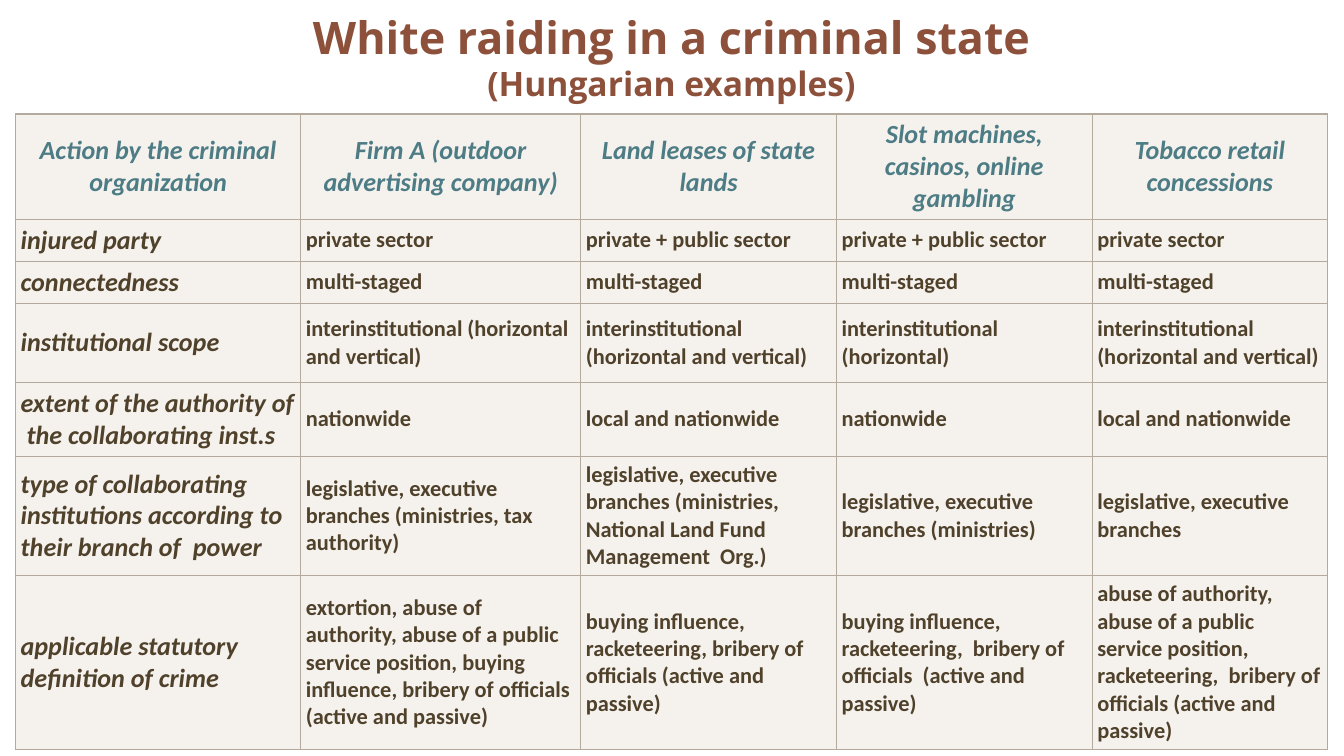
import pptx
import pptx.util
import pptx.dml.color
import pptx.enum.text
import pptx.oxml
import pptx.oxml.ns

Pt = pptx.util.Pt
ALIGN = pptx.enum.text.PP_ALIGN
MIDDLE = pptx.enum.text.MSO_ANCHOR.MIDDLE

BROWN, TEAL, DARK = "8D503B", "4D7C85", "50412B"
SAND, RULE = "EFEAE4", "B3A99D"
LEFT, TOP, INSET = 8.4, 61, 2.7
THIN, THICK = 0.5, 1
COLS = [152.8, 150, 137, 137, 126]
ROWS = [54, 21.6, 21.6, 42.5, 38.2, 61.2, 89.3]
CELLS = [
    ["Action by the criminal organization", "Firm A (outdoor advertising company)",
     "Land leases of state lands", "Slot machines, casinos, online gambling",
     "Tobacco retail\nconcessions"],
    ["injured party", "private sector", "private + public sector",
     "private + public sector", "private sector"],
    ["connectedness"] + ["multi-staged"] * 4,
    ["institutional scope", "interinstitutional (horizontal and vertical)",
     "interinstitutional\n(horizontal and vertical)",
     "interinstitutional (horizontal)",
     "interinstitutional (horizontal and vertical)"],
    ["extent of the authority of  the collaborating inst.s", "nationwide",
     "local and nationwide", "nationwide", "local and nationwide"],
    ["type of collaborating institutions according to their branch of  power",
     "legislative, executive branches (ministries, tax authority)",
     "legislative, executive\nbranches (ministries,\nNational Land Fund Management  Org.)",
     "legislative, executive branches (ministries)",
     "legislative, executive branches"],
    ["applicable statutory definition of crime",
     "extortion, abuse of authority, abuse of a public service position, "
     "buying influence, bribery of officials (active and passive)",
     "buying influence, racketeering, bribery of officials (active and\npassive)",
     "buying influence,\nracketeering,  bribery of officials  (active and passive)",
     "abuse of authority, abuse of a public service position, "
     "racketeering,  bribery of officials (active and passive)"],
]


def color(code):
    return pptx.dml.color.RGBColor.from_string(code)


def style(run, face, size, code, slant=False):
    font = run.font
    font.name = face
    font.size = Pt(size)
    font.bold = True
    font.italic = slant
    font.color.rgb = color(code)


def add_title(slide):
    title = slide.shapes.title
    title.left, title.top = Pt(LEFT), Pt(0)
    title.width, title.height = Pt(sum(COLS)), Pt(60.5)
    frame = title.text_frame
    frame.text = "White raiding in a criminal state\v(Hungarian examples)"
    frame.word_wrap = True
    frame.auto_size = pptx.enum.text.MSO_AUTO_SIZE.NONE
    frame.vertical_anchor = MIDDLE
    para = frame.paragraphs[0]
    para.alignment = ALIGN.CENTER
    for run, size in zip(para.runs, (24, 18)):
        style(run, "Open Sans", size, BROWN)


def shade(cell):
    cell.fill.solid()
    cell.fill.fore_color.rgb = color(SAND)
    props = cell._tc.get_or_add_tcPr()
    tone = props.find(".//" + pptx.oxml.ns.qn("a:srgbClr"))
    tone.append(pptx.oxml.parse_xml(
        f'<a:alpha {pptx.oxml.ns.nsdecls("a")} val="60000"/>'))


def border(cell, row, col):
    edges = {"L": col == 0, "R": col == len(COLS) - 1,
             "T": row == 0, "B": row == len(ROWS) - 1}
    props = cell._tc.get_or_add_tcPr()
    for spot, (side, outer) in enumerate(edges.items()):
        width = Pt(THICK if outer else THIN)
        props.insert(spot, pptx.oxml.parse_xml(
            f'<a:ln{side} {pptx.oxml.ns.nsdecls("a")} w="{width}">'
            f'<a:solidFill><a:srgbClr val="{RULE}"/></a:solidFill></a:ln{side}>'))


def fill_cell(cell, text, row, col):
    head = row == 0
    label = head or col == 0
    cell.text = text
    cell.vertical_anchor = MIDDLE
    cell.margin_left = cell.margin_right = Pt(INSET)
    cell.margin_top = cell.margin_bottom = Pt(INSET)
    for para in cell.text_frame.paragraphs:
        para.alignment = ALIGN.CENTER if head else ALIGN.LEFT
        for run in para.runs:
            style(run, "Calibri", 14 if label else 12, TEAL if head else DARK, label)
    shade(cell)
    border(cell, row, col)


def add_grid(slide):
    table = slide.shapes.add_table(len(ROWS), len(COLS), Pt(LEFT), Pt(TOP),
                                   Pt(sum(COLS)), Pt(sum(ROWS))).table
    table.first_row = table.horz_banding = False
    for col, width in zip(table.columns, COLS):
        col.width = Pt(width)
    for row, height in zip(table.rows, ROWS):
        row.height = Pt(height)
    for row, texts in enumerate(CELLS):
        for col, text in enumerate(texts):
            fill_cell(table.cell(row, col), text, row, col)


def main():
    deck = pptx.Presentation()
    deck.slide_width, deck.slide_height = Pt(720), Pt(405)
    slide = deck.slides.add_slide(deck.slide_layouts[5])
    add_title(slide)
    add_grid(slide)
    deck.save("out.pptx")


if __name__ == "__main__":
    main()
